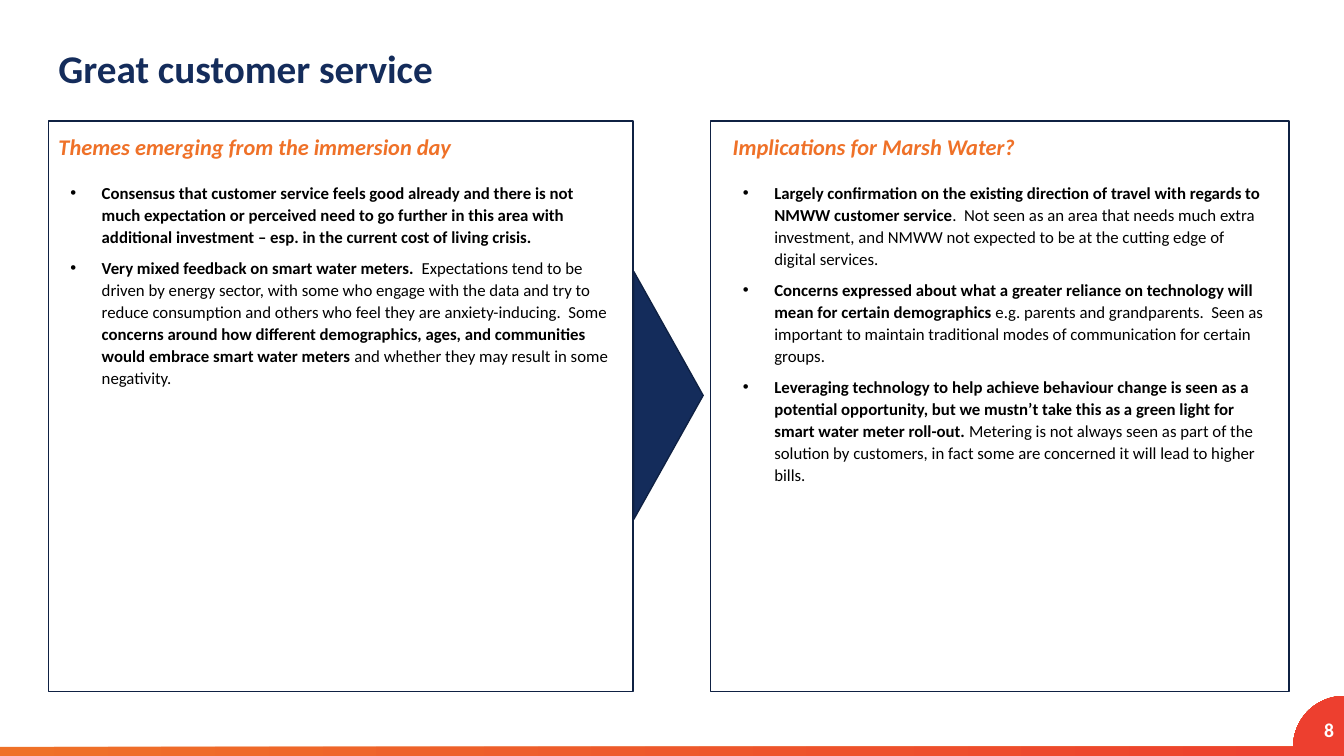
import math
from dataclasses import dataclass

import pptx
import pptx.dml.color
import pptx.enum.shapes
import pptx.enum.text
import pptx.util

Cm = pptx.util.Cm
Pt = pptx.util.Pt
RGB = pptx.dml.color.RGBColor.from_string
SHAPE = pptx.enum.shapes.MSO_SHAPE
ALIGN = pptx.enum.text.PP_ALIGN
ANCHOR = pptx.enum.text.MSO_ANCHOR


@dataclass(frozen=True)
class Theme:
    font: str = "Calibri"
    navy: str = "142C5B"
    outline: str = "0F2143"
    orange: str = "EF7128"
    red: str = "ED3F2F"
    black: str = "000000"
    white: str = "FFFFFF"
    title: int = 28
    heading: int = 16
    body: int = 12
    number: int = 14


theme = Theme()


def place(sp, left, top, width, height):
    sp.left, sp.top, sp.width, sp.height = Cm(left), Cm(top), Cm(width), Cm(height)
    tf = sp.text_frame
    tf.word_wrap = True
    tf.auto_size = pptx.enum.text.MSO_AUTO_SIZE.NONE
    tf.vertical_anchor = ANCHOR.TOP
    return tf


def style(p, size, color, spacing=1.0, align=ALIGN.LEFT, italic=False):
    p.alignment = align
    p.line_spacing = spacing
    p.space_before = Pt(0)
    for r in p.runs:
        r.font.name = theme.font
        r.font.size = Pt(size)
        r.font.bold = True
        r.font.italic = italic
        r.font.color.rgb = RGB(color)


panels = [
    {
        "heading": "Themes emerging from the immersion day",
        "heading_box": (1.22, 3.02, 13.77, 2.08),
        "frame": (1.22, 3.05, 14.73, 14.38),
        "list_box": (1.52, 4.42, 14.07, 12.27),
        "bullets": [
            [("Consensus that customer service feels good already and there is not much expectation or perceived need to go further in this area with additional investment – esp. in the current cost of living crisis.", True)],
            [("Very mixed feedback on smart water meters.  ", True),
             ("Expectations tend to be driven by energy sector, with some who engage with the data and try to reduce consumption and others who feel they are anxiety-inducing.  Some ", False),
             ("concerns around how different demographics, ages, and communities would embrace smart water meters ", True),
             ("and whether they may result in some negativity.", False)],
        ],
    },
    {
        "heading": "Implications for Marsh Water?",
        "heading_box": (18.21, 3.02, 10.72, 2.08),
        "frame": (17.91, 3.05, 14.58, 14.38),
        "list_box": (18.47, 4.42, 13.64, 9.63),
        "bullets": [
            [("Largely confirmation on the existing direction of travel with regards to NMWW customer service", True),
             (".  Not seen as an area that needs much extra investment, and NMWW not expected to be at the cutting edge of digital services.", False)],
            [("Concerns expressed about what a greater reliance on technology will mean for certain demographics ", True),
             ("e.g. parents and grandparents.  Seen as important to maintain traditional modes of communication for certain groups.", False)],
            [("Leveraging technology to help achieve behaviour change is seen as a potential opportunity, but we mustn’t take this as a green light for smart water meter roll-out.", True),
             (" Metering is not always seen as part of the solution by customers, in fact some are concerned it will lead to higher bills.", False)],
        ],
    },
]

slide_w, slide_h = 33.87, 19.05
prs = pptx.Presentation()
prs.slide_width, prs.slide_height = Cm(slide_w), Cm(slide_h)
s = prs.slides.add_slide(prs.slide_layouts.get_by_name("Comparison"))

bar_top, radius = 18.82, 1.28
arc = []
for step in range(25):
    angle = math.pi / 2 * step / 24
    arc.append((Cm(slide_w - radius * math.cos(angle)), Cm(bar_top - radius * math.sin(angle))))
fb = s.shapes.build_freeform(Cm(0), Cm(bar_top))
fb.add_line_segments(arc + [(Cm(slide_w), Cm(slide_h)), (Cm(0), Cm(slide_h))], close=True)
footer = fb.convert_to_shape()
footer.shadow.inherit = False
footer.fill.gradient()
footer.fill.gradient_angle = 0
for stop, color in zip(footer.fill.gradient_stops, (theme.orange, theme.red)):
    stop.color.rgb = RGB(color)
footer.line.fill.background()

number = s.shapes.add_textbox(0, 0, 0, 0)
tf = place(number, 31.47, 17.88, 2.4, 1.02)
tf.vertical_anchor = ANCHOR.MIDDLE
tf.margin_top = tf.margin_bottom = 0
tf.text = "8"
style(tf.paragraphs[0], theme.number, theme.white, align=ALIGN.RIGHT)

tf = place(s.shapes.title, 1.22, 1.02, 31.39, 1.52)
tf.vertical_anchor = ANCHOR.MIDDLE
tf.text = "Great customer service"
style(tf.paragraphs[0], theme.title, theme.navy, 0.9)

placeholders = {ph.placeholder_format.idx: ph for ph in s.placeholders}
for panel, (heading_idx, list_idx) in zip(panels, ((1, 2), (3, 4))):
    tf = place(placeholders[heading_idx], *panel["heading_box"])
    tf.text = panel["heading"]
    style(tf.paragraphs[0], theme.heading, theme.orange, 1.3, italic=True)

    frame = s.shapes.add_shape(SHAPE.RECTANGLE, *map(Cm, panel["frame"]))
    frame.shadow.inherit = False
    frame.fill.background()
    frame.line.color.rgb = RGB(theme.outline)
    frame.line.width = Pt(1)

    tf = place(placeholders[list_idx], *panel["list_box"])
    for i, parts in enumerate(panel["bullets"]):
        p = tf.add_paragraph() if i else tf.paragraphs[0]
        for text, _ in parts:
            p.add_run().text = text
        style(p, theme.body, theme.black, 1.1)
        p.space_after = Pt(6)
        for r, (_, bold) in zip(p.runs, parts):
            r.font.bold = bold
        pPr = p._p.get_or_add_pPr()
        pPr.set("marL", str(Cm(0.79)))
        pPr.set("indent", str(-Cm(0.79)))

arrow = s.shapes.add_shape(SHAPE.ISOSCELES_TRIANGLE, Cm(13.72), Cm(9.09), Cm(6.25), Cm(1.75))
arrow.rotation = 90
arrow.shadow.inherit = False
arrow.fill.solid()
arrow.fill.fore_color.rgb = RGB(theme.navy)
arrow.line.color.rgb = RGB(theme.outline)
arrow.line.width = Pt(1)

prs.save("out.pptx")
